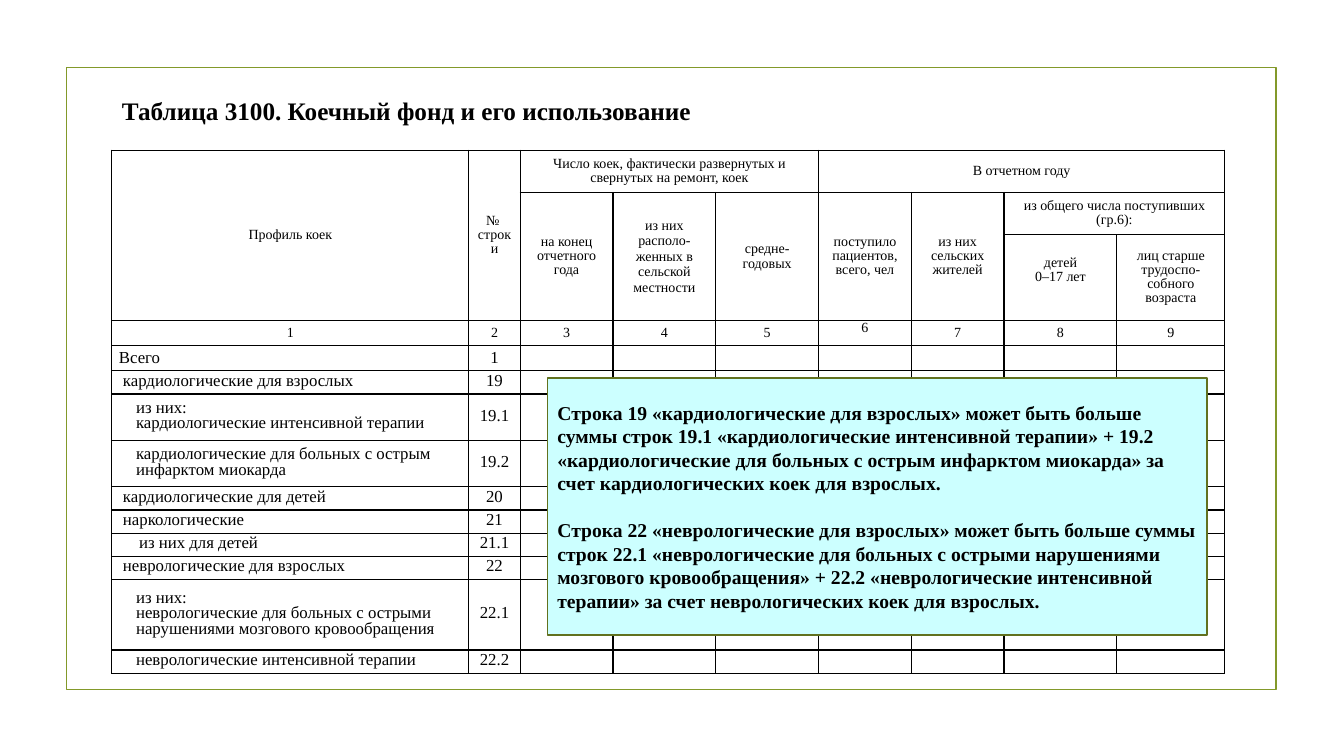
from lxml import etree
from pptx import Presentation
from pptx.dml.color import RGBColor
from pptx.enum import shapes, text
from pptx.oxml import ns
from pptx.util import Inches, Pt

BLACK = RGBColor(0, 0, 0)
OLIVE = RGBColor(0x83, 0x99, 0x2A)
MOSS = RGBColor(0x61, 0x71, 0x1F)
AQUA = RGBColor(0xCC, 0xFF, 0xFF)
FACE = "Times New Roman"
LEFT, MID = text.PP_ALIGN.LEFT, text.PP_ALIGN.CENTER

COLS = [3.54, 0.51, 0.92, 1.02, 1.02, 0.92, 0.92, 1.12, 1.07]
ROWS = [0.42, 0.42, 0.85, 0.25, 0.25, 0.23, 0.46, 0.46,
        0.23, 0.23, 0.23, 0.23, 0.7, 0.23]
# row, column, row span, column span, lines, exact line pitch
HEADS = [
    (0, 0, 3, 1, ["Профиль коек"], 10),
    (0, 1, 3, 1, ["№ \vстроки"], 10),
    (0, 2, 1, 3, ["Число коек, фактически развернутых и свернутых на ремонт, коек"], 10),
    (0, 5, 1, 4, ["В отчетном году"], 10),
    (1, 2, 2, 1, ["на конец отчетного года"], 10),
    (1, 3, 2, 1, ["из них", "располо-", "женных в сельской местности"], None),
    (1, 4, 2, 1, ["средне-годовых"], None),
    (1, 5, 2, 1, ["поступило пациентов, всего, чел"], 10),
    (1, 6, 2, 1, ["из них сельских жителей"], 10),
    (1, 7, 1, 2, ["из общего числа поступивших (гр.6):"], 10),
    (2, 7, 1, 1, ["детей", "0–17 лет"], 10),
    (2, 8, 1, 1, ["лиц старше трудоспо-собного возраста"], 10),
]
# lines, row number, indent
BEDS = [
    (["Всего"], "1", 0),
    (["кардиологические для взрослых"], "19", 0.04),
    (["из них:", "кардиологические интенсивной терапии"], "19.1", 0.17),
    (["кардиологические для больных с острым", "инфарктом миокарда"], "19.2", 0.17),
    (["кардиологические для детей"], "20", 0.04),
    (["наркологические"], "21", 0.04),
    (["из них для детей"], "21.1", 0.2),
    (["неврологические для взрослых"], "22", 0.04),
    (["из них:", "неврологические для больных с острыми",
      "нарушениями мозгового кровообращения"], "22.1", 0.17),
    (["неврологические интенсивной терапии"], "22.2", 0.17),
]
NOTES = [
    "Строка 19 «кардиологические для взрослых» может быть больше суммы строк 19.1 "
    "«кардиологические интенсивной терапии» + 19.2 «кардиологические для больных с "
    "острым инфарктом миокарда» за счет кардиологических коек для взрослых.",
    "Строка 22 «неврологические для взрослых» может быть больше суммы",
    "строк 22.1 «неврологические для больных с острыми нарушениями мозгового "
    "кровообращения» + 22.2 «неврологические интенсивной терапии» за счет "
    "неврологических коек для взрослых.",
]


def style(item, **props):
    for key, val in props.items():
        setattr(item, key, val)


def write(frame, lines, size, align=LEFT, pitch=None, bold=False, indent=0):
    """Fill a text frame with one paragraph per line."""
    for i, line in enumerate(lines):
        para = frame.paragraphs[0] if i == 0 else frame.add_paragraph()
        para.text = line
        style(para, alignment=align)
        if pitch:
            para.line_spacing = Pt(pitch)
        if indent:
            para._p.get_or_add_pPr().set("marL", str(Inches(indent)))
        for run in para.runs:
            style(run.font, name=FACE, size=Pt(size), bold=bold)
            run.font.color.rgb = BLACK


def add_box(slide, box, edge, fill=None):
    shape = slide.shapes.add_shape(shapes.MSO_SHAPE.RECTANGLE, *map(Inches, box))
    shape.shadow.inherit = False
    if fill is None:
        shape.fill.background()
    else:
        shape.fill.solid()
        shape.fill.fore_color.rgb = fill
    shape.line.color.rgb = edge
    shape.line.width = Pt(1.25)
    return shape


def add_title(slide, box):
    title = slide.shapes.title
    style(title, **dict(zip(("left", "top", "width", "height"), map(Inches, box))))
    style(title.text_frame, word_wrap=True, vertical_anchor=text.MSO_ANCHOR.TOP)
    write(title.text_frame, ["Таблица 3100. Коечный фонд и его использование"], 18, bold=True)


def prep_cell(cell):
    """Give a cell black borders, no fill, tight margins and a small empty line."""
    props = cell._tc.get_or_add_tcPr()
    for side in "LRTB":
        line = etree.SubElement(props, ns.qn(f"a:ln{side}"), w=str(Pt(1)))
        fill = etree.SubElement(line, ns.qn("a:solidFill"))
        etree.SubElement(fill, ns.qn("a:srgbClr"), val=str(BLACK))
    cell.fill.background()
    style(cell, margin_left=Inches(0.07), margin_right=Inches(0.07),
          margin_top=0, margin_bottom=0, vertical_anchor=text.MSO_ANCHOR.MIDDLE)
    para = cell.text_frame.paragraphs[0]._p
    etree.SubElement(para, ns.qn("a:endParaRPr"), sz="1000")


def add_beds(slide, box):
    table = slide.shapes.add_table(len(ROWS), len(COLS), *map(Inches, box)).table
    style(table, first_row=False, horz_banding=False)
    for col, width in zip(table.columns, COLS):
        col.width = Inches(width)
    for row, height in zip(table.rows, ROWS):
        row.height = Inches(height)
    for cell in table.iter_cells():
        prep_cell(cell)

    for row, col, down, across, lines, pitch in HEADS:
        cell = table.cell(row, col)
        if down * across > 1:
            cell.merge(table.cell(row + down - 1, col + across - 1))
        write(cell.text_frame, lines, 10, MID, pitch)
    table.cell(2, 7).margin_bottom = Pt(10)

    for col in range(len(COLS)):
        write(table.cell(3, col).text_frame, [str(col + 1)], 10, MID, 11)
    table.cell(3, 5).vertical_anchor = text.MSO_ANCHOR.TOP

    for row, (lines, number, indent) in enumerate(BEDS, 4):
        pitch = 11 if indent else None
        write(table.cell(row, 0).text_frame, lines, 12, LEFT, pitch, indent=indent)
        write(table.cell(row, 1).text_frame, [number], 12, MID, pitch)


def add_note(slide, box):
    frame = add_box(slide, box, MOSS, AQUA).text_frame
    style(frame, word_wrap=True, vertical_anchor=text.MSO_ANCHOR.MIDDLE)
    write(frame, NOTES, 14, bold=True)
    frame.paragraphs[1].space_before = Pt(16.75)


def main():
    deck = Presentation()
    style(deck, slide_width=Inches(13.33), slide_height=Inches(7.5))
    slide = deck.slides.add_slide(deck.slide_layouts[5])
    add_box(slide, (0.66, 0.67, 12, 6.17), OLIVE)
    add_title(slide, (1.11, 0.9, 11.26, 0.4))
    add_beds(slide, (1.11, 1.49, 11.04, 5.22))
    add_note(slide, (5.43, 3.75, 6.54, 2.55))
    deck.save("out.pptx")


if __name__ == "__main__":
    main()
